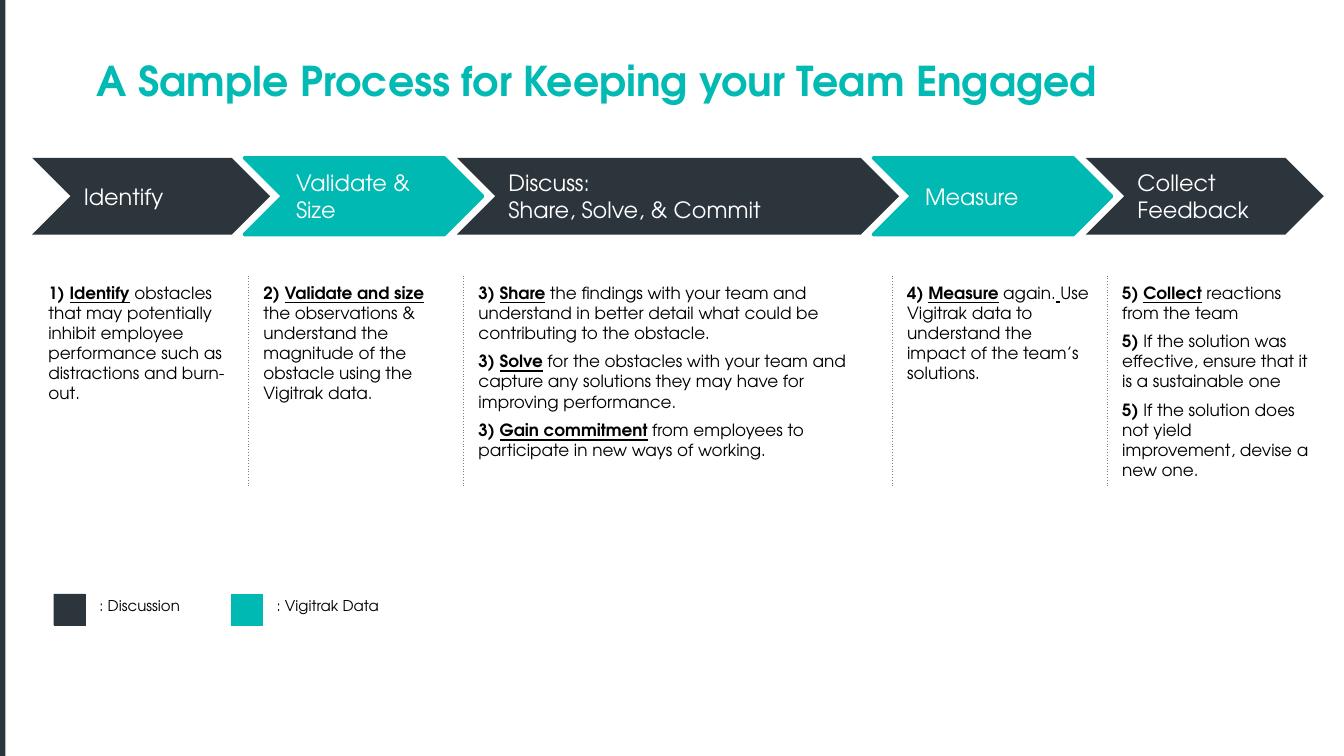
"""Build the slide that shows a five-step process for keeping a team engaged."""
from dataclasses import dataclass
from typing import Any, NamedTuple

from lxml.etree import SubElement
from pptx import Presentation
from pptx.dml.color import RGBColor
from pptx.enum.shapes import MSO_SHAPE as Shape
from pptx.enum.text import MSO_ANCHOR as Anchor, MSO_AUTO_SIZE as AutoSize, PP_ALIGN as Align
from pptx.oxml import parse_xml
from pptx.oxml.ns import nsdecls, qn
from pptx.util import Emu, Inches, Pt

DARK = RGBColor(0x2C, 0x34, 0x3C)
TEAL = RGBColor(0x00, 0xB9, 0xB2)
TITLE_TEAL = RGBColor(0x00, 0xBA, 0xB3)
WHITE = RGBColor(0xFF, 0xFF, 0xFF)
BLACK = RGBColor(0x00, 0x00, 0x00)
DIVIDER = RGBColor(0x68, 0x81, 0x97)
FONT = "TeX Gyre Adventor"
NO_GRID = "{2D5ABB26-0587-4C30-8999-92F81FD0307C}"
UNIT = Inches(0.1)
COLUMNS, ROWS = 100, 56.25
OVERLAP = 1.9
SWATCH, LABEL = 2.3, 10.8
LEGEND_LEFT, LEGEND_TOP = 4, 44.2


class Span(NamedTuple):
    """A piece of text with its weight and underline."""
    text: str
    bold: bool = False
    underline: bool = False


class Area(NamedTuple):
    """A rectangle in grid columns and rows."""
    left: float
    top: float
    width: float
    height: float


@dataclass(frozen=True)
class Step:
    """One step: its arrow, its table column and its points."""
    name: str
    color: RGBColor
    arrow: float
    column: float
    points: list[list[Span]]


def point(number: int, key: str, *rest: Span) -> list[Span]:
    """Return a numbered point with an underlined key phrase."""
    lead = [Span(f"{number}) ", bold=True)]
    return lead + ([Span(key, bold=True, underline=True)] if key else []) + list(rest)


STEPS = [
    Step("Identify", DARK, 17.7, 16, [
        point(1, "Identify", Span(" obstacles that may potentially inhibit employee "
                                  "performance such as distractions and burn-out."))]),
    Step("Validate & Size", TEAL, 17.7, 16, [
        point(2, "Validate and size ", Span("the observations & understand the magnitude "
                                            "of the obstacle using the Vigitrak data."))]),
    Step("Discuss:\nShare, Solve, & Commit", DARK, 32.9, 31.9, [
        point(3, "Share", Span(" the findings with your team and understand in better "
                               "detail what could be contributing to the obstacle.")),
        point(3, "Solve", Span(" for the obstacles with your team and capture any "
                               "solutions they may have for improving performance.")),
        point(3, "Gain commitment", Span(" from employees to participate in new "
                                         "ways of working."))]),
    Step("Measure", TEAL, 17.7, 16, [
        point(4, "Measure", Span(" again."), Span(" ", underline=True),
              Span("Use Vigitrak data to understand the impact of the team’s solutions."))]),
    Step("Collect Feedback", DARK, 17.7, 16, [
        point(5, "Collect", Span(" reactions from the team")),
        point(5, "", Span("If the solution was effective, ensure that it is "
                          "a sustainable one")),
        point(5, "", Span("If the solution does not yield improvement, devise a new one."))]),
]


def grid(count: float) -> Emu:
    """Turn grid units into a length."""
    return Emu(round(count * UNIT))


def place(area: Area) -> list[Emu]:
    """Turn an area into lengths."""
    return [grid(value) for value in area]


def apply(target: Any, formats: dict[str, Any]) -> None:
    """Set attributes from format values."""
    for name, value in formats.items():
        setattr(target, name, value)


def write(para: Any, spans: list[Span], size: float, color: RGBColor) -> None:
    """Add formatted spans to a paragraph."""
    for span in spans:
        run = para.add_run()
        run.text = span.text
        apply(run.font, {"name": FONT, "size": Pt(size), "bold": span.bold,
                         "underline": span.underline})
        run.font.color.rgb = color


def add_block(slide: Any, kind: Any, area: Area, color: RGBColor) -> Any:
    """Draw a filled shape without outline or shadow."""
    block = slide.shapes.add_shape(kind, *place(area))
    block.shadow.inherit = False
    block.fill.solid()
    block.fill.fore_color.rgb = color
    block.line.fill.background()
    return block


def add_title(slide: Any, text: str) -> None:
    """Move and format the title placeholder."""
    title = slide.shapes.title
    apply(title, dict(zip(("left", "top", "width", "height"), place(Area(4, 3.7, 91.8, 8.1)))))
    apply(title.text_frame, {
        "word_wrap": True, "auto_size": AutoSize.NONE, "vertical_anchor": Anchor.TOP,
        "margin_left": Inches(0.07), "margin_right": Inches(0.07),
        "margin_top": Inches(0.04), "margin_bottom": Inches(0.04)})
    para = title.text_frame.paragraphs[0]
    apply(para, {"alignment": Align.LEFT, "line_spacing": 1.0, "space_before": Pt(0)})
    indent_paragraph(para, 0.5, -0.25)
    write(para, [Span(text, bold=True)], 22, TITLE_TEAL)


def indent_paragraph(para: Any, margin: float, indent: float) -> None:
    """Set the left margin and first-line indent in inches."""
    properties = para._p.get_or_add_pPr()
    properties.set("marL", str(Inches(margin)))
    properties.set("indent", str(Inches(indent)))


def add_arrow(slide: Any, step: Step, left: float) -> None:
    """Draw the chevron of a step."""
    arrow = add_block(slide, Shape.CHEVRON, Area(left, 11.75, step.arrow, 5.7), step.color)
    if step.color == TEAL:
        arrow.line.color.rgb = TEAL
        arrow.line.width = Pt(2)
    frame = arrow.text_frame
    apply(frame, {"word_wrap": True, "vertical_anchor": Anchor.MIDDLE})
    for index, text in enumerate(step.name.split("\n")):
        para = frame.add_paragraph() if index else frame.paragraphs[0]
        para.alignment = Align.LEFT
        write(para, [Span(text)], 12, WHITE)


def add_plain_table(slide: Any, area: Area, widths: list[float]) -> Any:
    """Add a one-row table without style or fill."""
    table = slide.shapes.add_table(1, len(widths), *place(area)).table
    apply(table, {"first_row": False, "horz_banding": False})
    table._tbl.tblPr.find(qn("a:tableStyleId")).text = NO_GRID
    for column, width in zip(table.columns, widths):
        column.width = grid(width)
    for cell in table.iter_cells():
        cell.fill.background()
    return table


def add_divider(cell: Any, sides: list[str]) -> None:
    """Give a cell dotted borders on the named sides."""
    properties = cell._tc.get_or_add_tcPr()
    for position, side in enumerate(sides):
        properties.insert(position, parse_xml(
            f'<a:{side} {nsdecls("a")} w="{Pt(0.75)}"><a:solidFill><a:srgbClr val="{DIVIDER}"/>'
            f'</a:solidFill><a:prstDash val="sysDot"/></a:{side}>'))


def add_step_table(slide: Any) -> None:
    """Add the table with the points of each step."""
    widths = [step.column for step in STEPS]
    table = add_plain_table(slide, Area(2.5, 20.5, sum(widths), 15.7), widths)
    last = len(STEPS) - 1
    for index, step in enumerate(STEPS):
        cell = table.cell(0, index)
        add_divider(cell, ["lnL"] * (index > 0) + ["lnR"] * (index < last))
        for order, spans in enumerate(step.points):
            para = cell.text_frame.add_paragraph() if order else cell.text_frame.paragraphs[0]
            apply(para, {"line_spacing": 1.3, "space_before": Pt(4.6 if order else 0)})
            indent_paragraph(para, 0.01, 0)
            write(para, spans, 9, BLACK)


def add_legend(slide: Any) -> None:
    """Add the colour key under the steps."""
    area = Area(LEGEND_LEFT, LEGEND_TOP, 2 * (SWATCH + LABEL), SWATCH)
    table = add_plain_table(slide, area, [SWATCH, LABEL] * 2)
    for index, (text, color) in enumerate(((": Discussion", DARK), (": Vigitrak Data", TEAL))):
        swatch, label = table.cell(0, 2 * index), table.cell(0, 2 * index + 1)
        swatch.fill.solid()
        swatch.fill.fore_color.rgb = color
        SubElement(swatch.text_frame.paragraphs[0]._p, qn("a:endParaRPr"), sz="800")
        label.margin_right = 0
        write(label.text_frame.paragraphs[0], [Span(text)], 8, BLACK)
    add_block(slide, Shape.RECTANGLE, Area(LEGEND_LEFT, LEGEND_TOP, SWATCH, SWATCH), DARK)


def main() -> None:
    """Build and save the deck."""
    deck = Presentation()
    apply(deck, {"slide_width": grid(COLUMNS), "slide_height": grid(ROWS)})
    slide = deck.slides.add_slide(deck.slide_layouts[5])
    add_block(slide, Shape.RECTANGLE, Area(0, 0, 0.4, ROWS), DARK)
    add_title(slide, "A Sample Process for Keeping your Team Engaged")
    left = 2.4
    for step in STEPS:
        add_arrow(slide, step, left)
        left += step.arrow - OVERLAP
    add_legend(slide)
    add_step_table(slide)
    deck.save("out.pptx")


if __name__ == "__main__":
    main()
